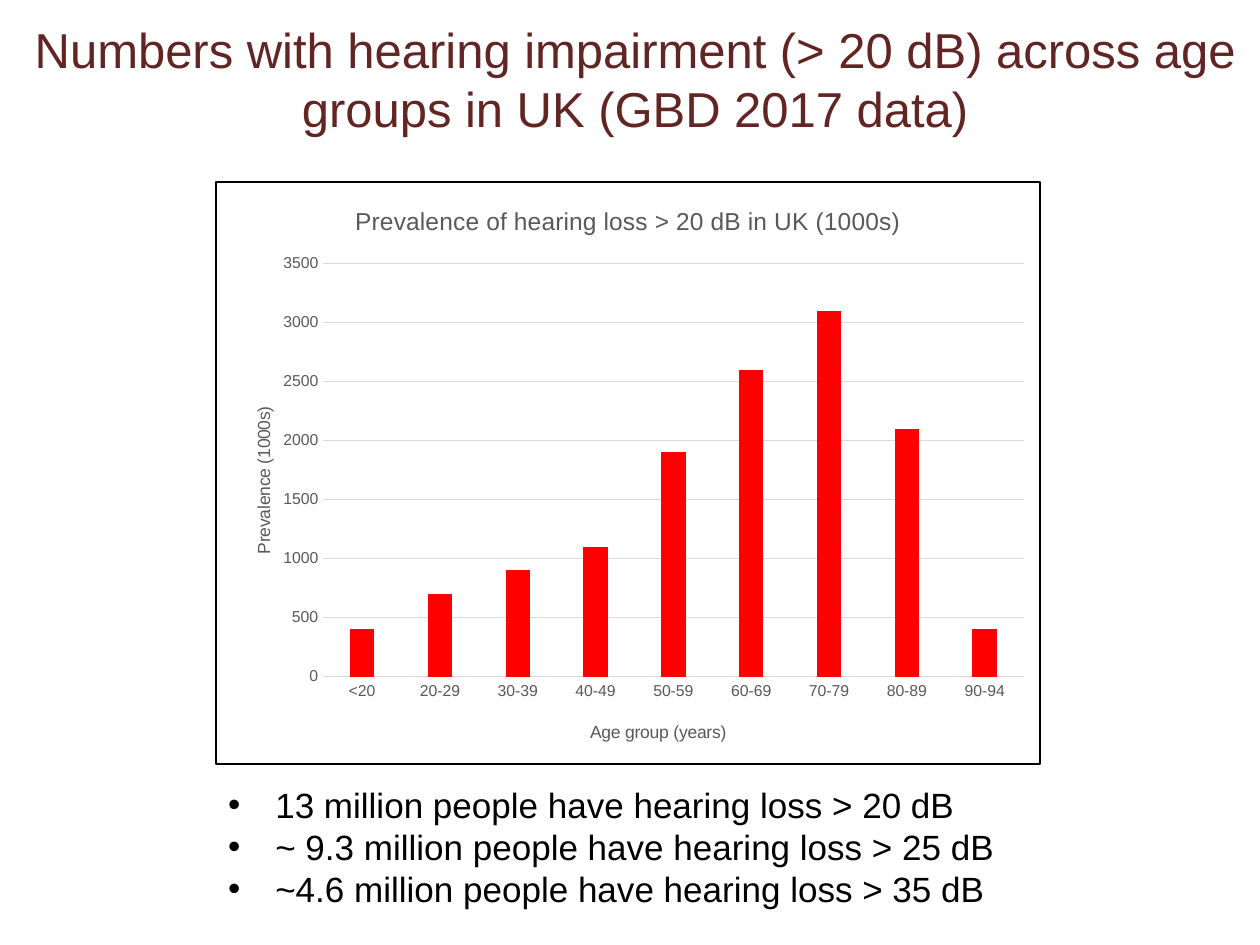
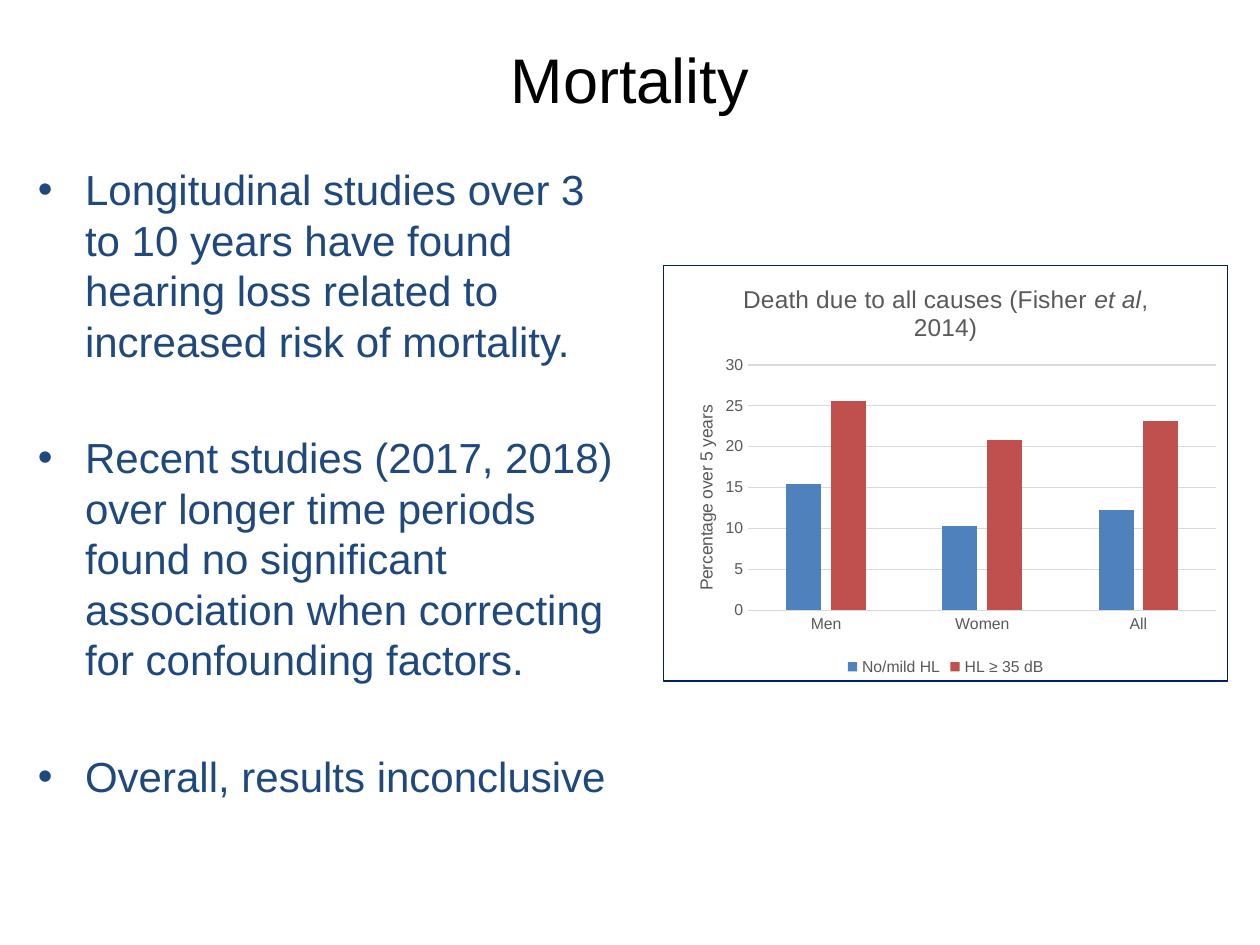
"""Build two slides on hearing loss prevalence and mortality."""
from dataclasses import dataclass
from typing import Optional

from lxml.etree import SubElement
from pptx import Presentation
from pptx.chart.data import CategoryChartData
from pptx.dml.color import RGBColor
from pptx.enum.chart import XL_CHART_TYPE, XL_LEGEND_POSITION, XL_TICK_MARK
from pptx.enum.text import MSO_ANCHOR, MSO_AUTO_SIZE, PP_ALIGN
from pptx.oxml import parse_xml
from pptx.oxml.ns import nsdecls, qn
from pptx.util import Inches, Pt

FONT = "Arial"
BLACK = RGBColor(0x00, 0x00, 0x00)
MAROON = RGBColor(0x63, 0x25, 0x23)
NAVY = RGBColor(0x00, 0x20, 0x60)
DARK_BLUE = RGBColor(0x1F, 0x49, 0x7D)
GREY = RGBColor(0x59, 0x59, 0x59)
GRID = RGBColor(0xD9, 0xD9, 0xD9)
RED = RGBColor(0xFF, 0x00, 0x00)
BLUE = RGBColor(0x4F, 0x81, 0xBD)
BRICK = RGBColor(0xC0, 0x50, 0x4D)


@dataclass
class Box:
    left: float
    top: float
    width: float
    height: float

    def lengths(self) -> tuple:
        return tuple(Inches(v) for v in (self.left, self.top, self.width, self.height))


@dataclass
class Series:
    name: str
    values: tuple
    color: RGBColor


@dataclass
class AxisTitle:
    text: str
    x: float
    y: float


@dataclass
class ColumnChart:
    box: Box
    plot: Box
    title: tuple
    categories: tuple
    series: tuple
    value_max: int
    value_step: int
    border: RGBColor
    value_title: AxisTitle
    category_title: Optional[AxisTitle] = None
    legend: bool = False


@dataclass
class TextBlock:
    box: Box
    lines: tuple
    size: float
    color: RGBColor
    first_gap: float = 0
    gap: float = 0


@dataclass
class SlideContent:
    title: TextBlock
    bullets: TextBlock
    chart: ColumnChart


SLIDES = (
    SlideContent(
        TextBlock(Box(0.04, 0, 10, 1.25),
                  ("Numbers with hearing impairment (> 20 dB) across age groups in UK (GBD 2017 data)",),
                  28, MAROON),
        TextBlock(Box(1.71, 6.17, 6.55, 1.3),
                  ("13 million people have hearing loss > 20 dB",
                   "~ 9.3 million people have hearing loss > 25 dB",
                   "~4.6 million people have hearing loss > 35 dB"),
                  20, BLACK),
        ColumnChart(
            Box(1.71, 1.44, 6.55, 4.63), Box(0.13, 0.14, 0.85, 0.71),
            ("Prevalence of hearing loss > 20 dB in UK (1000s)",),
            ("<20", "20-29", "30-39", "40-49", "50-59", "60-69", "70-79", "80-89", "90-94"),
            (Series("Prevalence", (400, 700, 900, 1100, 1900, 2600, 3100, 2100, 400), RED),),
            3500, 500, BLACK,
            AxisTitle("Prevalence (1000s)", 0.04, 0.38),
            AxisTitle("Age group (years)", 0.45, 0.92)),
    ),
    SlideContent(
        TextBlock(Box(0, 0, 10, 1.25), ("Mortality",), 36, BLACK),
        TextBlock(Box(0.2, 1.25, 4.9, 5.7),
                  ("Longitudinal studies over 3 to 10 years have found hearing loss related to "
                   "increased risk of mortality.",
                   "Recent studies (2017, 2018) over longer time periods found no significant "
                   "association when correcting for confounding factors.",
                   "Overall, results inconclusive"),
                  24, DARK_BLUE, first_gap=5, gap=38),
        ColumnChart(
            Box(5.26, 2.1, 4.49, 3.31), Box(0.15, 0.24, 0.83, 0.59),
            ("Death due to all causes (Fisher ", "et al", ", 2014)"),
            ("Men", "Women", "All"),
            (Series("No/mild HL", (15.4, 10.3, 12.3), BLUE),
             Series("HL ≥ 35 dB", (25.6, 20.8, 23.2), BRICK)),
            30, 5, NAVY,
            AxisTitle("Percentage over 5 years", 0.05, 0.33),
            legend=True),
    ),
)


def style_font(font, size: float, color: RGBColor, italic: bool = False) -> None:
    """Apply the shared typeface with a size and colour."""
    font.name, font.size, font.bold, font.italic = FONT, Pt(size), False, italic
    font.color.rgb = color


def add_text(p, text: str, *, size: float, color: RGBColor, italic: bool = False) -> None:
    """Append a formatted run to a paragraph."""
    r = p.add_run()
    r.text = text
    style_font(r.font, size, color, italic)


def fill_placeholder(sp, block: TextBlock):
    """Move a placeholder and write one paragraph per line."""
    sp.left, sp.top, sp.width, sp.height = block.box.lengths()
    tf = sp.text_frame
    tf.word_wrap = True
    tf.auto_size = MSO_AUTO_SIZE.NONE
    for i, line in enumerate(block.lines):
        p = tf.add_paragraph() if i else tf.paragraphs[0]
        p.space_before = Pt(block.gap if i else block.first_gap)
        add_text(p, line, size=block.size, color=block.color)
    return tf


def set_layout(parent, index: int, **fractions: float) -> None:
    """Give a chart part a manual place as fractions of the chart."""
    for old in parent.findall(qn("c:layout")):
        parent.remove(old)
    layout = parse_xml(f"<c:layout {nsdecls('c')}/>")
    manual = SubElement(layout, qn("c:manualLayout"))
    if "w" in fractions:
        SubElement(manual, qn("c:layoutTarget")).set("val", "inner")
    for key in ("x", "y"):
        SubElement(manual, qn(f"c:{key}Mode")).set("val", "edge")
    for key, value in fractions.items():
        SubElement(manual, qn(f"c:{key}")).set("val", str(value))
    parent.insert(index, layout)


def add_axis_title(axis, title: AxisTitle, rotation: int = 0) -> None:
    """Write an axis title at its place."""
    axis.has_title = True
    tf = axis.axis_title.text_frame
    add_text(tf.paragraphs[0], title.text, size=10, color=GREY)
    body = tf._txBody.find(qn("a:bodyPr"))
    body.set("rot", str(rotation))
    body.set("vert", "horz")
    set_layout(axis.axis_title._element, 1, x=title.x, y=title.y)


def set_border(chart, color: RGBColor) -> None:
    """Frame the chart on a white ground."""
    border = parse_xml(
        f"<c:spPr {nsdecls('c', 'a')}><a:solidFill><a:srgbClr val='FFFFFF'/></a:solidFill>"
        f"<a:ln w='{Pt(0.75)}'><a:solidFill><a:srgbClr val='{color}'/></a:solidFill></a:ln></c:spPr>")
    chart._chartSpace.find(qn("c:chart")).addnext(border)


def style_axes(chart, content: ColumnChart) -> None:
    """Format both axes, the gridlines and the axis titles."""
    category, value = chart.category_axis, chart.value_axis
    for axis in (category, value):
        axis.major_tick_mark = axis.minor_tick_mark = XL_TICK_MARK.NONE
        style_font(axis.tick_labels.font, 9, GREY)
    value.minimum_scale, value.maximum_scale = 0, content.value_max
    value.major_unit = content.value_step
    value.has_major_gridlines = True
    value.format.line.fill.background()
    for line in (category.format.line, value.major_gridlines.format.line):
        line.color.rgb = GRID
        line.width = Pt(0.75)
    add_axis_title(value, content.value_title, rotation=-5400000)
    if content.category_title:
        add_axis_title(category, content.category_title)


def add_column_chart(slide, content: ColumnChart) -> None:
    """Draw a clustered column chart."""
    data = CategoryChartData()
    data.categories = content.categories
    for series in content.series:
        data.add_series(series.name, series.values)
    chart = slide.shapes.add_chart(
        XL_CHART_TYPE.COLUMN_CLUSTERED, *content.box.lengths(), data).chart
    style_font(chart.font, 10, BLACK)
    set_border(chart, content.border)

    chart.has_title = True
    p = chart.chart_title.text_frame.paragraphs[0]
    for i, text in enumerate(content.title):
        add_text(p, text, size=14, color=GREY, italic=i == 1)
    chart.chart_title.include_in_layout = False

    plot = chart.plots[0]
    plot.gap_width, plot.overlap, plot.vary_by_categories = 219, -27, False
    for drawn, series in zip(plot.series, content.series):
        drawn.format.fill.solid()
        drawn.format.fill.fore_color.rgb = series.color
    style_axes(chart, content)
    area = chart._chartSpace.find(qn("c:chart")).find(qn("c:plotArea"))
    place = content.plot
    set_layout(area, 0, x=place.left, y=place.top, w=place.width, h=place.height)

    chart.has_legend = content.legend
    if content.legend:
        chart.legend.position = XL_LEGEND_POSITION.BOTTOM
        chart.legend.include_in_layout = False
        style_font(chart.legend.font, 9, GREY)


def add_slide(prs, content: SlideContent) -> None:
    """Add a slide with its title, bullets and chart."""
    slide = prs.slides.add_slide(prs.slide_layouts[1])
    tf = fill_placeholder(slide.shapes.title, content.title)
    tf.vertical_anchor = MSO_ANCHOR.MIDDLE
    tf.paragraphs[0].alignment = PP_ALIGN.CENTER
    fill_placeholder(slide.placeholders[1], content.bullets)
    add_column_chart(slide, content.chart)


def main() -> None:
    """Build and save the presentation."""
    prs = Presentation()
    prs.slide_width, prs.slide_height = Inches(10), Inches(7.5)
    for content in SLIDES:
        add_slide(prs, content)
    prs.save("out.pptx")


if __name__ == "__main__":
    main()
